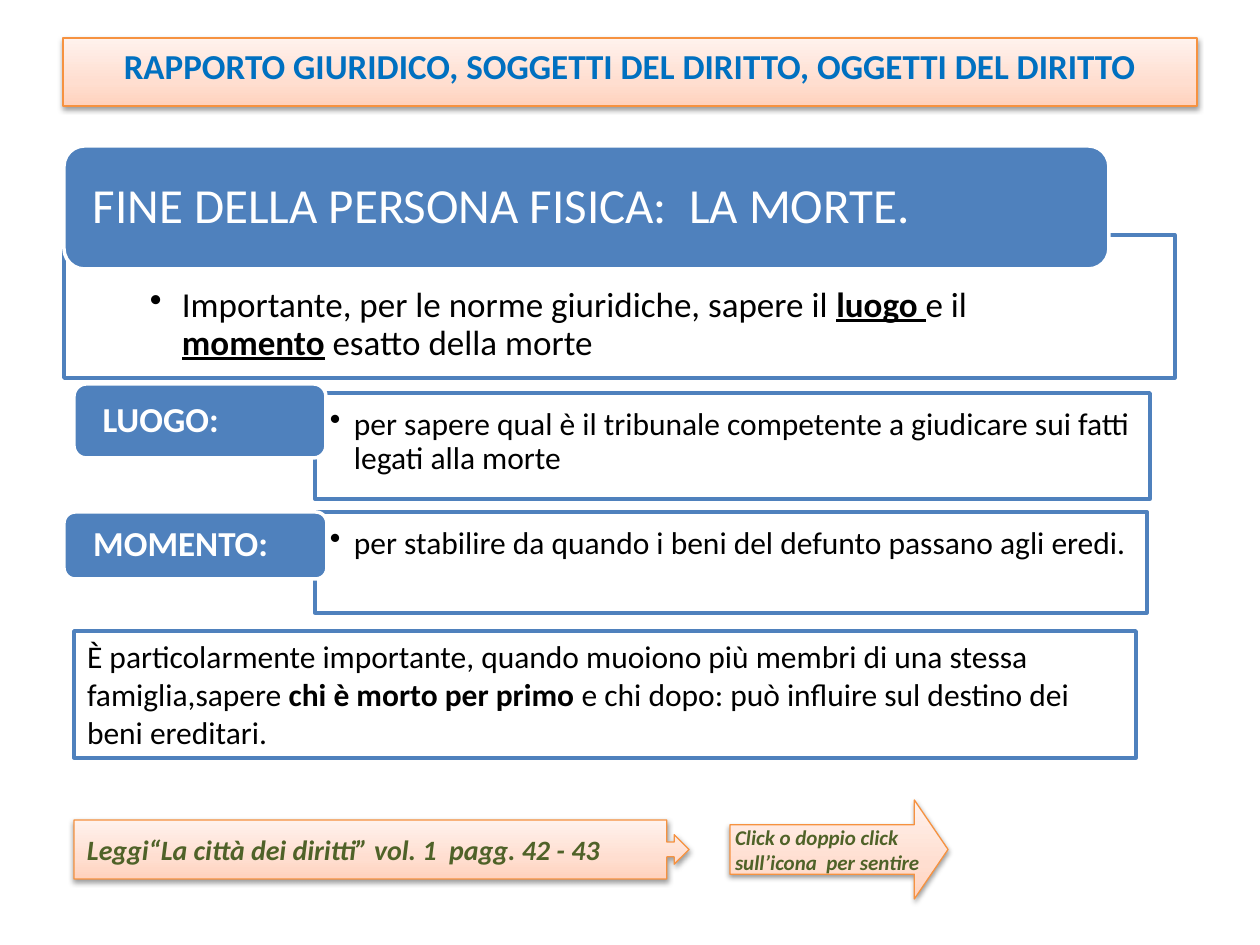
import pptx
import pptx.dml.color
import pptx.enum.shapes
import pptx.enum.text
import pptx.oxml.ns
import pptx.util
from lxml import etree

PX = 914400 / 126
FONT = "Calibri"
COLORS = {
    "white": "FFFFFF", "black": "000000", "blue": "4F81BD", "title": "0070C0",
    "green": "4F6228", "orange": "F69240",
}
PEACH_STOPS = [(0, "FFD2BD"), (35, "FFDED0"), (100, "FFF2ED")]
SHAPE = pptx.enum.shapes.MSO_SHAPE
ANCHOR = pptx.enum.text.MSO_ANCHOR
ALIGN = pptx.enum.text.PP_ALIGN


def px(n):
    return pptx.util.Emu(round(n * PX))


def rgb(name):
    return pptx.dml.color.RGBColor.from_string(COLORS[name])


def add_xml(parent, tag, **attrs):
    return etree.SubElement(parent, pptx.oxml.ns.qn(tag), {k: str(v) for k, v in attrs.items()})


class Deck:
    def __init__(self, width, height):
        self.prs = pptx.Presentation()
        self.prs.slide_width, self.prs.slide_height = px(width), px(height)
        self.slide = None

    def new_slide(self):
        self.slide = self.prs.slides.add_slide(self.prs.slide_layouts[5])

    def shape(self, kind, box, fill, line, adjustments=()):
        sp = self.slide.shapes.add_shape(kind, *map(px, box))
        for i, value in enumerate(adjustments):
            sp.adjustments[i] = value
        sp.shadow.inherit = False
        sp.fill.solid()
        sp.fill.fore_color.rgb = rgb(fill)
        sp.line.color.rgb = rgb(line)
        sp.line.width = pptx.util.Pt(2)
        return sp

    def peach(self, sp):
        """Give a shape the peach gradient, orange outline and soft shadow."""
        sp.fill.gradient()
        sp.fill.gradient_angle = 90
        spPr = sp.element.spPr
        stops = spPr.find(".//" + pptx.oxml.ns.qn("a:gsLst"))
        stops.clear()
        for pos, color in PEACH_STOPS:
            add_xml(add_xml(stops, "a:gs", pos=pos * 1000), "a:srgbClr", val=color)
        sp.line.color.rgb = rgb("orange")
        sp.line.width = pptx.util.Pt(0.75)
        sp.shadow.inherit = False
        effects = spPr.find(pptx.oxml.ns.qn("a:effectLst"))
        shadow = add_xml(effects, "a:outerShdw", blurRad=pptx.util.Pt(3.1),
                         dist=pptx.util.Pt(1.6), dir=90 * 60000, rotWithShape=0)
        add_xml(add_xml(shadow, "a:srgbClr", val=COLORS["black"]), "a:alpha", val=38000)

    def text(self, sp, runs, size, color="black", bold=False, italic=False, align=ALIGN.LEFT,
             anchor=ANCHOR.TOP, insets=(13, 6, 13, 6), spacing=None, bullet=0):
        """Fill one paragraph; runs are (text, bold, underline), bullet is its indent."""
        tf = sp.text_frame
        tf.word_wrap = True
        tf.auto_size = pptx.enum.text.MSO_AUTO_SIZE.NONE
        tf.vertical_anchor = anchor
        tf.margin_left, tf.margin_top, tf.margin_right, tf.margin_bottom = map(px, insets)
        p = tf.paragraphs[0]
        p.alignment = align
        if spacing:
            p.line_spacing = spacing
        if bullet:
            pPr = p._p.get_or_add_pPr()
            pPr.set("marL", str(px(bullet)))
            pPr.set("indent", str(px(-bullet)))
            add_xml(pPr, "a:buChar", char="•")
        p.font.name, p.font.size = FONT, pptx.util.Pt(size)
        p.font.bold, p.font.italic = bold, italic
        p.font.color.rgb = rgb(color)
        if isinstance(runs, str):
            runs = [(runs, False, False)]
        for content, strong, underline in runs:
            r = p.add_run()
            r.text = content
            if strong:
                r.font.bold = True
            if underline:
                r.font.underline = True

    def title(self, box, content):
        sp = self.slide.shapes.title
        sp.left, sp.top, sp.width, sp.height = map(px, box)
        self.peach(sp)
        self.text(sp, content, 20, "title", bold=True, align=ALIGN.CENTER)

    def panel(self, box, runs, size, **style):
        sp = self.shape(SHAPE.RECTANGLE, box, "white", "blue")
        self.text(sp, runs, size, **style)

    def label(self, box, content, size, bold=True):
        sp = self.shape(SHAPE.ROUNDED_RECTANGLE, box, "blue", "white")
        side = 29 - round(0.05 * box[3])  # the rounded corners already inset the text
        self.text(sp, content, size, "white", bold=bold, anchor=ANCHOR.MIDDLE,
                  insets=(side, 0, side, 0), spacing=0.9)

    def arrow(self, kind, box, adjustments, content, size, insets):
        sp = self.shape(kind, box, "white", "orange", adjustments)
        self.peach(sp)
        self.text(sp, content, size, "green", bold=True, italic=True,
                  anchor=ANCHOR.MIDDLE, insets=insets)


def main():
    deck = Deck(1260, 945)
    deck.new_slide()
    deck.title((63, 38, 1134, 68), "RAPPORTO GIURIDICO, SOGGETTI DEL DIRITTO, OGGETTI DEL DIRITTO")
    deck.arrow(SHAPE.RIGHT_ARROW_CALLOUT, (74, 820, 615, 59), (0.25, 0.25, 0.25, 0.964),
               "Leggi“La città dei diritti” vol. 1  pagg. 42 - 43", 16, (13, 6, 13, 6))

    deck.panel((64, 235, 1111, 143), [
        ("Importante, per le norme giuridiche, sapere il ", False, False),
        ("luogo ", True, True), ("e il ", False, False),
        ("momento", True, True), (" esatto della morte", False, False),
    ], 20, insets=(86, 52, 86, 20), spacing=0.9, bullet=32)
    deck.label((64, 146, 1045, 123), "FINE DELLA PERSONA FISICA:  LA MORTE.", 28, bold=False)

    reasons = [
        ("LUOGO:", (74, 384, 252, 74), (315, 393, 835, 106), 10,
         "per sapere qual è il tribunale competente a giudicare sui fatti legati alla morte"),
        ("MOMENTO:", (64, 512, 263, 67), (315, 512, 832, 101), 15,
         "per stabilire da quando i beni del defunto passano agli eredi."),
    ]
    for name, label_box, panel_box, right, reason in reasons:
        deck.panel(panel_box, reason, 18, insets=(15, 15, right, 10), spacing=0.9, bullet=24)
        deck.label(label_box, name, 20)

    deck.panel((74, 631, 1062, 127), [
        ("È particolarmente importante, quando muoiono più membri di una stessa famiglia,sapere ",
         False, False),
        ("chi è morto per primo ", True, False),
        ("e chi dopo: può influire sul destino dei beni ereditari.", False, False),
    ], 18)
    deck.arrow(SHAPE.RIGHT_ARROW, (730, 800, 218, 99), (0.5, 0.34),
               "Click o doppio click sull’icona  per sentire", 12, (5, 6, 5, 6))
    deck.prs.save("out.pptx")


if __name__ == "__main__":
    main()
